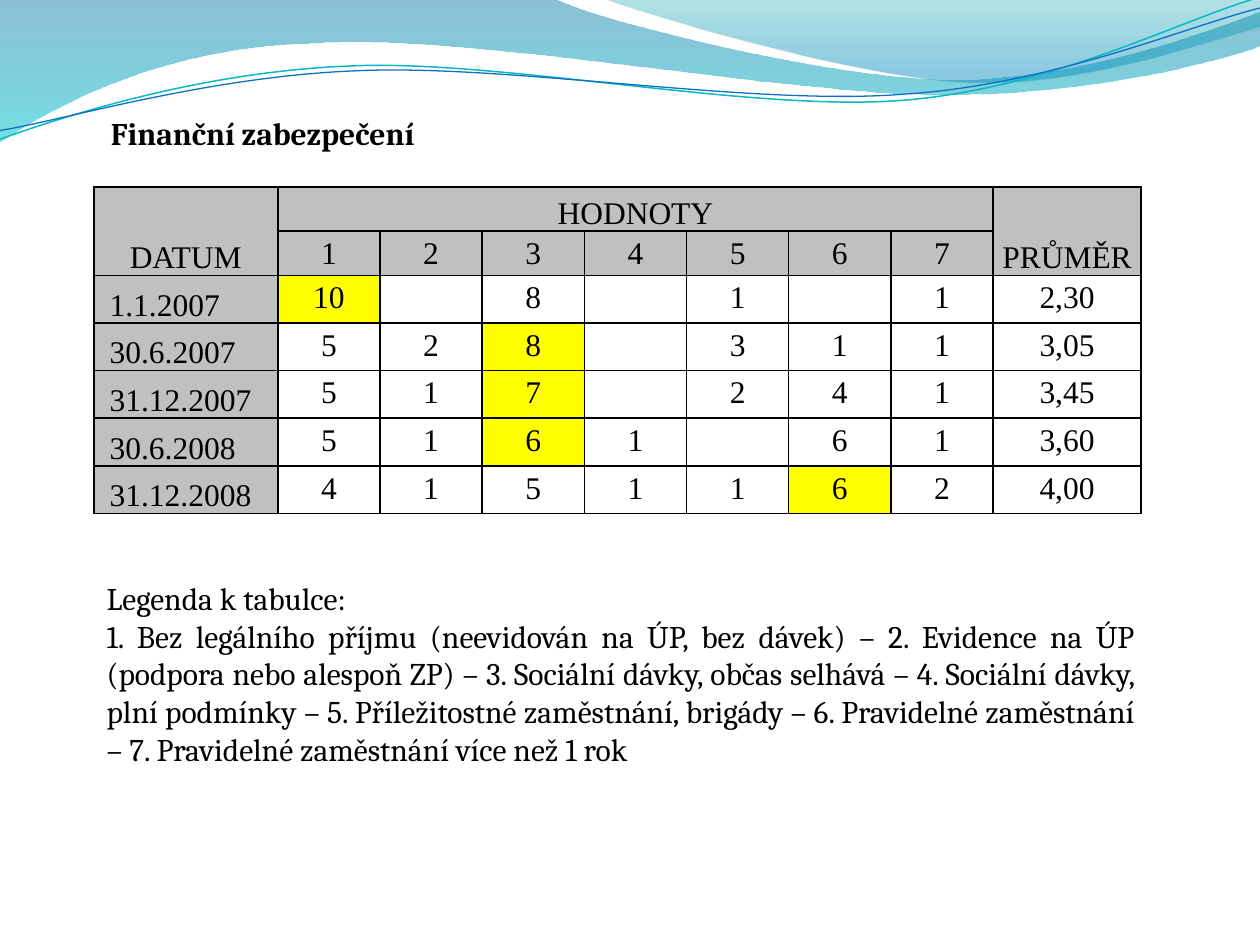
from dataclasses import dataclass
from typing import Optional

from lxml import etree
from pptx import Presentation
from pptx.dml.color import RGBColor
from pptx.enum.text import MSO_ANCHOR, MSO_AUTO_SIZE, PP_ALIGN
from pptx.oxml import parse_xml
from pptx.oxml.ns import nsdecls, qn
from pptx.util import Cm, Pt

LEFT, CENTER, JUSTIFY = PP_ALIGN.LEFT, PP_ALIGN.CENTER, PP_ALIGN.JUSTIFY
TOP, MIDDLE, BOTTOM = MSO_ANCHOR.TOP, MSO_ANCHOR.MIDDLE, MSO_ANCHOR.BOTTOM
GROW = MSO_AUTO_SIZE.SHAPE_TO_FIT_TEXT

BLACK, GREY, YELLOW = "000000", "C0C0C0", "FFFF00"
HEADING_FONT, TABLE_FONT = "Cambria", "Times New Roman"
TEXT_SIZE = Pt(18)
WAVE_UNIT = Cm(2.54)  # a tenth of the slide width
LINE_TILT = -2.7


@dataclass
class Wave:
    """A start point, then lines (2 numbers) and Bezier curves (6 numbers)."""
    start: tuple
    segments: list
    stops: tuple = ()  # position %, colour, opacity %
    line: Optional[str] = None
    weight: float = 0


WAVES = [
    Wave((0, 0), [(4.4, -0.01), (4.76, 0.17, 6.64, 0.63, 7.58, 0.63),
                  (8.53, 0.63, 9.58, 0.26, 10, 0.09), (10.01, 0.36),
                  (9.83, 0.44, 8.7, 0.76, 7.46, 0.75),
                  (6.22, 0.75, 3.82, 0.28, 2.57, 0.34),
                  (1.29, 0.36, 0.46, 0.83, -0.01, 1.13), (0, 0)],
         stops=((0, "0074A1", 45), (100, "00C6CF", 55))),
    Wave((4.79, -0.01), [(5.09, 0.11, 6.82, 0.62, 7.69, 0.65),
                         (8.56, 0.69, 9.61, 0.32, 10, 0.21), (10, 0),
                         (4.79, -0.01)],
         stops=((0, "00A1A9", 30), (80, "008BBF", 45))),
    Wave((-0.02, 0.87), [(0.47, 0.72, 1.58, 0.41, 2.78, 0.42),
                         (3.96, 0.42, 5.91, 0.93, 7.12, 0.9),
                         (8.32, 0.87, 9.4, 0.36, 10, 0.22)],
         line="0AB8BF", weight=0.85),
    Wave((-0.02, 0.8), [(0.46, 0.75, 1.64, 0.45, 2.83, 0.46),
                        (4.03, 0.46, 5.96, 0.89, 7.16, 0.85),
                        (8.35, 0.83, 9.42, 0.42, 10.02, 0.3)],
         line="0F6FC6", weight=0.75),
]

COLUMN_WIDTHS = [3.71] + [2.06] * 7 + [2.98]
ROW_HEIGHTS = [0.89] * 2 + [0.96] * 5
HEADERS = [
    ["DATUM", "HODNOTY"] + [""] * 6 + ["PRŮMĚR"],
    [""] + [str(number) for number in range(1, 8)] + [""],
]
RECORDS = [
    ["1.1.2007", "10", "", "8", "", "1", "", "1", "2,30"],
    ["30.6.2007", "5", "2", "8", "", "3", "1", "1", "3,05"],
    ["31.12.2007", "5", "1", "7", "", "2", "4", "1", "3,45"],
    ["30.6.2008", "5", "1", "6", "1", "", "6", "1", "3,60"],
    ["31.12.2008", "4", "1", "5", "1", "1", "6", "2", "4,00"],
]
PEAK_COLUMNS = [1, 3, 3, 3, 6]  # most frequent value in each record
LEGEND = [
    "Legenda k tabulce:",
    "1. Bez legálního příjmu (neevidován na ÚP, bez dávek) – 2. Evidence na ÚP "
    "(podpora nebo alespoň ZP) – 3. Sociální dávky, občas selhává – 4. Sociální "
    "dávky, plní podmínky – 5. Příležitostné zaměstnání, brigády – 6. Pravidelné "
    "zaměstnání – 7. Pravidelné zaměstnání více než 1 rok",
]


def color(value: str) -> RGBColor:
    return RGBColor.from_string(value)


def apply(target, **values) -> None:
    for name, value in values.items():
        setattr(target, name, value)


def write(paragraph, text: str, font: str, bold: bool = False) -> None:
    span = paragraph.add_run()
    span.text = text
    apply(span.font, name=font, size=TEXT_SIZE, bold=bold)
    span.font.color.rgb = color(BLACK)


def wave_points(wave: Wave) -> list:
    """List the end and control points of a wave in order."""
    numbers = [round(number * WAVE_UNIT)
               for part in (wave.start, *wave.segments) for number in part]
    return list(zip(numbers[::2], numbers[1::2]))


def bend(shape, wave: Wave) -> None:
    """Join each three steps that belong to a curve into one Bezier."""
    steps = iter(list(shape._element.iter(qn("a:lnTo"))))
    for segment in wave.segments:
        step = next(steps)
        if len(segment) == 2:
            continue
        curve = etree.Element(qn("a:cubicBezTo"))
        step.addprevious(curve)
        for part in (step, next(steps), next(steps)):
            curve.append(part[0])
            part.getparent().remove(part)


def gradient(stops: tuple):
    marks = "".join(
        f'<a:gs pos="{place * 1000}"><a:srgbClr val="{value}">'
        f'<a:alpha val="{opacity * 1000}"/></a:srgbClr></a:gs>'
        for place, value, opacity in stops)
    return parse_xml(f'<a:gradFill {nsdecls("a")} rotWithShape="1"><a:gsLst>{marks}'
                     '</a:gsLst><a:lin ang="5400000" scaled="0"/></a:gradFill>')


def draw_wave(page, wave: Wave) -> None:
    first, *others = wave_points(wave)
    builder = page.shapes.build_freeform(*first, scale=1.0)
    builder.add_line_segments(others, close=bool(wave.stops))
    shape = builder.convert_to_shape()
    bend(shape, wave)
    shape.shadow.inherit = False
    shape.fill.background()
    if wave.stops:
        empty_fill = shape._element.spPr.find(qn("a:noFill"))
        empty_fill.getparent().replace(empty_fill, gradient(wave.stops))
    if wave.line:
        shape.rotation = LINE_TILT
        shape.line.color.rgb = color(wave.line)
        shape.line.width = Pt(wave.weight)
    else:
        shape.line.fill.background()


def add_borders(cell) -> None:
    properties = cell._tc.get_or_add_tcPr()
    for side in ("lnL", "lnR", "lnT", "lnB"):
        border = etree.SubElement(properties, qn(f"a:{side}"), w=str(Pt(1)))
        fill = etree.SubElement(border, qn("a:solidFill"))
        etree.SubElement(fill, qn("a:srgbClr"), val=BLACK)


def fill_cell(cell, text: str, fill: Optional[str], is_date: bool, anchor) -> None:
    add_borders(cell)
    apply(cell, margin_left=Cm(0.32) if is_date else 0, margin_right=0,
          margin_top=0, margin_bottom=0, vertical_anchor=anchor)
    if fill:
        cell.fill.solid()
        cell.fill.fore_color.rgb = color(fill)
    else:
        cell.fill.background()
    paragraph = cell.text_frame.paragraphs[0]
    apply(paragraph, alignment=LEFT if is_date else CENTER, line_spacing=1.15)
    if text:
        write(paragraph, text, TABLE_FONT)


def draw_table(page) -> None:
    rows = HEADERS + RECORDS
    table = page.shapes.add_table(
        len(rows), len(COLUMN_WIDTHS), Cm(1.89), Cm(3.77),
        Cm(sum(COLUMN_WIDTHS)), Cm(sum(ROW_HEIGHTS))).table
    apply(table, first_row=False, horz_banding=False)
    for column, width in zip(table.columns, COLUMN_WIDTHS):
        column.width = Cm(width)
    for row, height in zip(table.rows, ROW_HEIGHTS):
        row.height = Cm(height)
    for r, texts in enumerate(rows):
        record = r - len(HEADERS)
        for c, text in enumerate(texts):
            is_date = record >= 0 and c == 0
            is_peak = record >= 0 and c == PEAK_COLUMNS[record]
            fill = GREY if record < 0 or is_date else YELLOW if is_peak else None
            anchor = BOTTOM if r == 0 or is_date else TOP
            fill_cell(table.cell(r, c), text, fill, is_date, anchor)
    for start, end in (((0, 0), (1, 0)), ((0, 1), (0, 7)), ((0, 8), (1, 8))):
        table.cell(*start).merge(table.cell(*end))


def main() -> None:
    deck = Presentation()
    apply(deck, slide_width=Cm(25.4), slide_height=Cm(19.05))
    page = deck.slides.add_slide(deck.slide_layouts[5])
    # Wave decoration
    for wave in WAVES:
        draw_wave(page, wave)
    # Heading
    title = page.shapes.title
    apply(title, left=Cm(1.98), top=Cm(2.18), width=Cm(15.09), height=Cm(1.02))
    apply(title.text_frame, vertical_anchor=TOP, auto_size=GROW, word_wrap=True)
    heading = title.text_frame.paragraphs[0]
    heading.alignment = LEFT
    write(heading, "Finanční zabezpečení", HEADING_FONT, bold=True)
    # Values by date
    draw_table(page)
    # Legend
    box = page.shapes.add_textbox(Cm(1.9), Cm(11.52), Cm(21.23), Cm(4.11))
    frame = box.text_frame
    apply(frame, vertical_anchor=MIDDLE, auto_size=GROW, word_wrap=True)
    for index, text in enumerate(LEGEND):
        para = frame.add_paragraph() if index else frame.paragraphs[0]
        para.alignment = JUSTIFY
        write(para, text, HEADING_FONT)
    deck.save("out.pptx")


if __name__ == "__main__":
    main()
